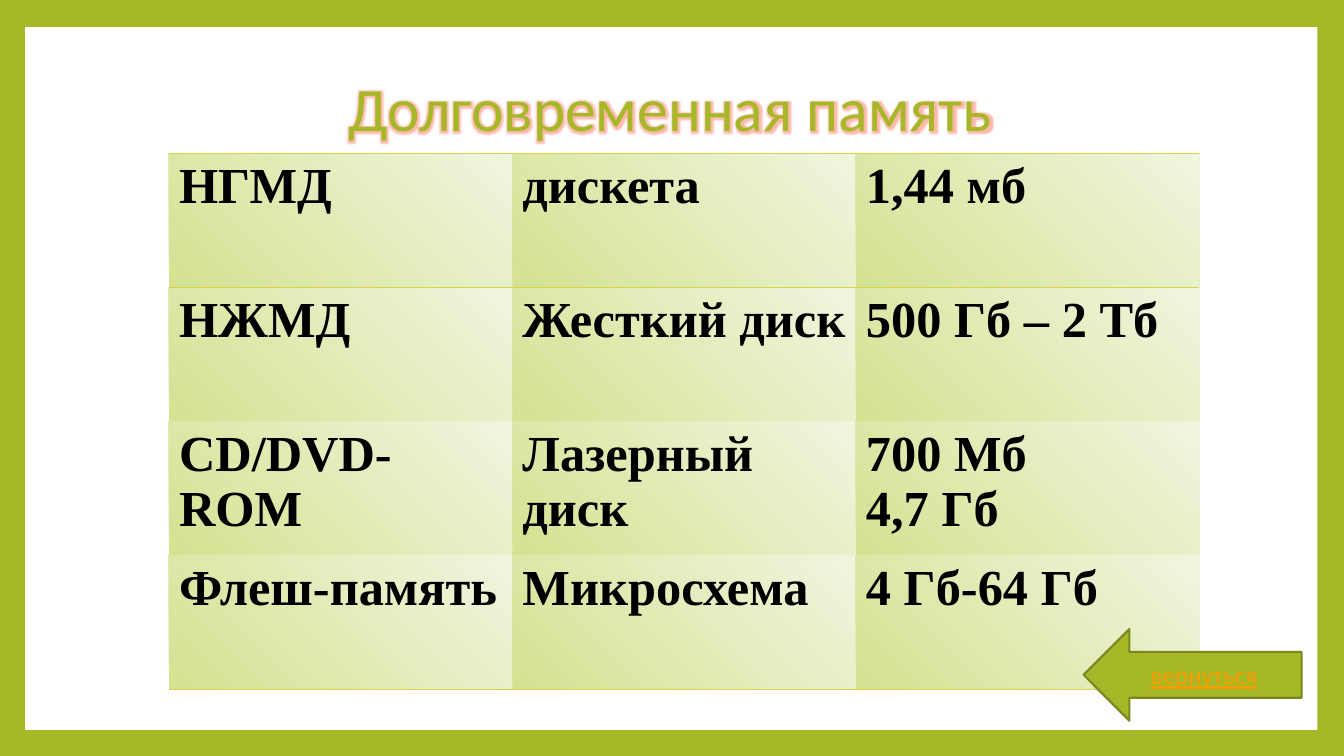
from lxml.etree import SubElement
from pptx import Presentation
from pptx.dml.color import RGBColor
from pptx.enum.shapes import MSO_SHAPE
from pptx.enum.text import MSO_ANCHOR, PP_ALIGN
from pptx.oxml import parse_xml
from pptx.oxml.ns import nsdecls, qn
from pptx.util import Pt

GREEN = "A6B727"


def paint(color, tone):
    color.rgb = RGBColor.from_string(tone)


def style(par, face, size, tone, bold=False):
    for run in par.runs:
        run.font.name = face
        run.font.size = Pt(size)
        run.font.bold = bold
        paint(run.font.color, tone)


deck = Presentation()
deck.slide_width, deck.slide_height = Pt(960), Pt(540)
slide = deck.slides.add_slide(deck.slide_layouts[5])
shapes = slide.shapes

# Green frame around a white panel
back = slide.background.fill
back.solid()
paint(back.fore_color, GREEN)
panel = shapes.add_shape(MSO_SHAPE.RECTANGLE, Pt(18), Pt(19.3), Pt(923), Pt(502))
panel.shadow.inherit = False
panel.fill.solid()
paint(panel.fill.fore_color, "FFFFFF")
panel.line.fill.background()

# Title with a soft glow, in front of the panel
title = shapes.title
panel.element.addnext(title.element)
title.left, title.top, title.width, title.height = Pt(90), Pt(31.7), Pt(778), Pt(96.5)
frame = title.text_frame
frame.text = "Долговременная память"
frame.vertical_anchor = MSO_ANCHOR.MIDDLE
head = frame.paragraphs[0]
head.alignment = PP_ALIGN.CENTER
head.line_spacing = 0.9
style(head, "Calibri", 44, GREEN)
glow = parse_xml(
    f'<a:effectLst {nsdecls("a")}><a:glow rad="63500"><a:srgbClr val="FF8A70">'
    '<a:alpha val="60000"/></a:srgbClr></a:glow></a:effectLst>')
head.runs[0].font.fill  # the effect list follows the fill
head.runs[0]._r.rPr.find(qn("a:solidFill")).addnext(glow)

# Table of storage devices
rows = [
    ("НГМД", "дискета", "1,44 мб"),
    ("НЖМД", "Жесткий диск", "500 Гб – 2 Тб"),
    ("CD/DVD-ROM", "Лазерный диск", "700 Мб\n4,7 Гб"),
    ("Флеш-память", "Микросхема", "4 Гб-64 Гб"),
]
edges = {0: ("a:lnT", "a:lnB"), 3: ("a:lnB",)}
table = shapes.add_table(4, 3, Pt(120.7), Pt(109.4), Pt(736), Pt(383)).table
table.first_row = table.horz_banding = False
table._tbl.tblPr.find(qn("a:tableStyleId")).text = "{2D5ABB26-0587-4C30-8999-92F81FD0307C}"
for r, row in enumerate(rows):
    for c, text in enumerate(row):
        cell = table.cell(r, c)
        cell.text_frame.text = text
        for par in cell.text_frame.paragraphs:
            style(par, "Times New Roman", 36, "000000", True)
        props = cell._tc.get_or_add_tcPr()
        for edge in edges.get(r, ()):
            line = SubElement(props, qn(edge), w=str(Pt(1)))
            ink = SubElement(line, qn("a:solidFill"))
            SubElement(ink, qn("a:srgbClr"), val="D7D447")
        cell.fill.gradient()
        cell.fill.gradient_angle = 45
        for stop, tone in zip(cell.fill.gradient_stops, ("D4E292", "F0F5DF")):
            paint(stop.color, tone)

# Return arrow
arrow = shapes.add_shape(MSO_SHAPE.LEFT_ARROW, Pt(774), Pt(449.3), Pt(155.7), Pt(65.5))
arrow.shadow.inherit = False
arrow.fill.solid()
paint(arrow.fill.fore_color, GREEN)
paint(arrow.line.color, "7B871D")
arrow.line.width = Pt(1.5)
arrow.text_frame.text = "вернуться"
arrow.text_frame.vertical_anchor = MSO_ANCHOR.MIDDLE
label = arrow.text_frame.paragraphs[0]
label.alignment = PP_ALIGN.CENTER
style(label, "Calibri", 18, "F59E00")
label.runs[0].font.underline = True

deck.save("out.pptx")
